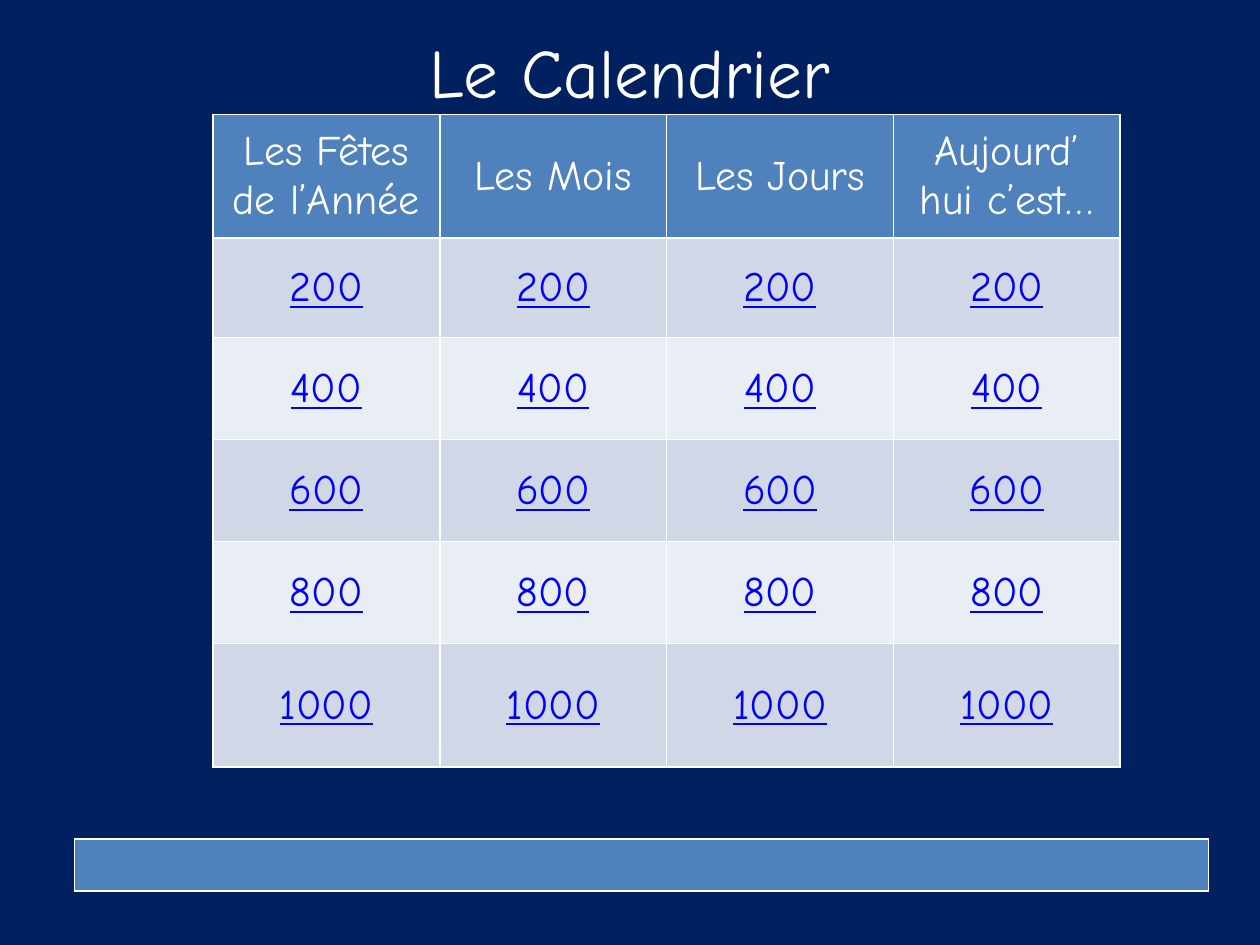
from pptx import Presentation
from pptx.dml.color import RGBColor
from pptx.enum import text
from pptx.util import Inches, Pt

NAVY = RGBColor(0x00, 0x20, 0x60)
WHITE = RGBColor(0xFF, 0xFF, 0xFF)
BLUE = RGBColor(0x4F, 0x81, 0xBD)
LINK_BLUE = RGBColor(0x00, 0x00, 0xFF)
DARK_BAND = RGBColor(0xD0, 0xD8, 0xE8)
LIGHT_BAND = RGBColor(0xE9, 0xED, 0xF4)
FONT = "Comic Neue"


def format_paragraph(paragraph, size, color):
    paragraph.alignment = text.PP_ALIGN.CENTER
    paragraph.font.name = FONT
    paragraph.font.size = Pt(size)
    paragraph.font.bold = False
    paragraph.font.color.rgb = color


def fill_cell(cell, color):
    cell.fill.solid()
    cell.fill.fore_color.rgb = color
    cell.vertical_anchor = text.MSO_ANCHOR.MIDDLE


presentation = Presentation()
presentation.slide_width = Inches(10)
presentation.slide_height = Inches(7.5)
slide = presentation.slides.add_slide(presentation.slide_layouts[5])
slide.background.fill.solid()
slide.background.fill.fore_color.rgb = NAVY

title = slide.shapes.title
title.left, title.top = Inches(0.5), Inches(0.3)
title.width, title.height = Inches(9), Inches(0.53)
title.text_frame.text = "Le Calendrier"
title.text_frame.vertical_anchor = text.MSO_ANCHOR.MIDDLE
format_paragraph(title.text_frame.paragraphs[0], 39.6, WHITE)

categories = ["Les Fêtes de l’Année", "Les Mois", "Les Jours", "Aujourd’ hui c’est…"]
points = [200, 400, 600, 800, 1000]
row_heights = [0.98, 0.79, 0.81, 0.81, 0.81, 0.98]

board = slide.shapes.add_table(
    len(row_heights), len(categories), Inches(1.69), Inches(0.91), Inches(7.2), Inches(5.18)
).table
for row, height in zip(board.rows, row_heights):
    row.height = Inches(height)

for column, category in enumerate(categories):
    for row, label in enumerate([category, *points]):
        cell = board.cell(row, column)
        cell.text = str(label)
        paragraph = cell.text_frame.paragraphs[0]
        if row == 0:
            fill_cell(cell, BLUE)
            format_paragraph(paragraph, 24, WHITE)
        else:
            fill_cell(cell, DARK_BAND if row % 2 else LIGHT_BAND)
            format_paragraph(paragraph, 24, LINK_BLUE)
            paragraph.font.underline = True

bar = slide.shapes.add_table(
    1, 1, Inches(0.59), Inches(6.66), Inches(9), Inches(0.41)
).table
fill_cell(bar.cell(0, 0), BLUE)

presentation.save("out.pptx")
